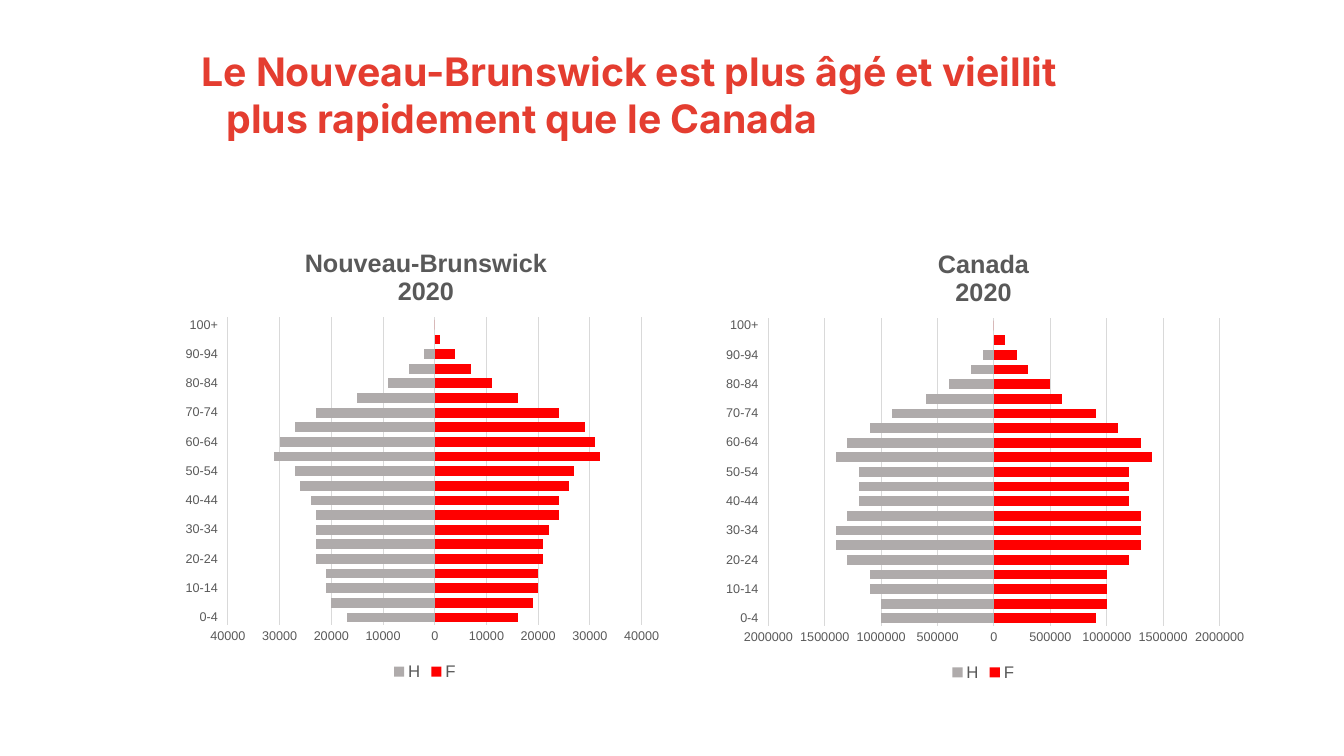
from dataclasses import dataclass
from lxml.etree import SubElement as Sub
from pptx import Presentation
from pptx.chart.data import CategoryChartData as Data
from pptx.dml.color import RGBColor as Rgb
from pptx.enum.chart import XL_CHART_TYPE as Kind
from pptx.enum.chart import XL_LEGEND_POSITION as Spot
from pptx.enum.chart import XL_TICK_LABEL_POSITION as Label
from pptx.enum.chart import XL_TICK_MARK as Tick
from pptx.enum.text import MSO_ANCHOR as Anchor
from pptx.enum.text import MSO_AUTO_SIZE as Fit
from pptx.enum.text import PP_ALIGN as Align
from pptx.oxml.ns import qn
from pptx.util import Cm, Pt


@dataclass(frozen=True)
class Theme:
    head: str = "E43D30"
    text: str = "595959"
    grid: str = "D9D9D9"
    men: str = "AFABAB"
    women: str = "FF0000"
    title: str = "Inter"
    body: str = "Arial"
    big: int = 28
    name: int = 18
    key: int = 12
    tick: int = 9


LOOK = Theme()
AGES = [f"{age}-{age + 4}" for age in range(0, 100, 5)] + ["100+"]
NB_MEN = [17, 20, 21, 21, 23, 23, 23, 23, 24, 26, 27, 31, 30, 27, 23, 15, 9, 5, 2, 0, 0]
NB_WOMEN = [16, 19, 20, 20, 21, 21, 22, 24, 24, 26, 27, 32, 31, 29, 24, 16, 11, 7, 4, 1, 0]
CA_MEN = [10, 10, 11, 11, 13, 14, 14, 13, 12, 12, 12, 14, 13, 11, 9, 6, 4, 2, 1, 0, 0]
CA_WOMEN = [9, 10, 10, 10, 12, 13, 13, 13, 12, 12, 12, 14, 13, 11, 9, 6, 5, 3, 2, 1, 0]


def style(font, face, size, color, bold=False):
    font.name = face
    font.size = Pt(size)
    font.bold = bold
    font.color.rgb = Rgb.from_string(color)


def stroke(line, color):
    line.color.rgb = Rgb.from_string(color)
    line.width = Pt(0.75)


def add_run(para, text, face, size, color):
    run = para.add_run()
    run.text = text
    style(run.font, face, size, color, True)


def add_head(slide, text):
    head = slide.shapes.title
    head.left, head.top = Cm(4.19), Cm(1.07)
    head.width, head.height = Cm(24.66), Cm(3.3)
    frame = head.text_frame
    frame.word_wrap = True
    frame.auto_size = Fit.NONE
    frame.vertical_anchor = Anchor.TOP
    para = frame.paragraphs[0]
    para.alignment = Align.LEFT
    props = para._p.get_or_add_pPr()
    props.set("marL", str(Cm(1.27)))
    props.set("indent", str(Cm(-0.64)))
    add_run(para, text, LOOK.title, LOOK.big, LOOK.head)


def place(node, index, sizes, inner=False):
    for old in node.findall(qn("c:layout")):
        node.remove(old)
    box = Sub(node, qn("c:layout"))
    node.insert(index, box)
    area = Sub(box, qn("c:manualLayout"))
    if inner:
        Sub(area, qn("c:layoutTarget")).set("val", "inner")
    for key in ("xMode", "yMode"):
        Sub(area, qn(f"c:{key}")).set("val", "edge")
    for key, size in zip("xywh", sizes):
        Sub(area, qn(f"c:{key}")).set("val", str(size))


def name_chart(chart, name, left):
    chart.has_title = True
    frame = chart.chart_title.text_frame
    add_run(frame.paragraphs[0], name, LOOK.body, LOOK.name, LOOK.text)
    add_run(frame.add_paragraph(), "2020", LOOK.body, LOOK.name, LOOK.text)
    place(chart.chart_title.element, 1, (left, 0.04))


def set_axes(chart, limit, step):
    ages, count = chart.category_axis, chart.value_axis
    for axis in (ages, count):
        axis.major_tick_mark = axis.minor_tick_mark = Tick.NONE
        style(axis.tick_labels.font, LOOK.body, LOOK.tick, LOOK.text)
    ages.tick_label_position = Label.LOW
    stroke(ages.format.line, LOOK.grid)
    count.minimum_scale, count.maximum_scale = -limit, limit
    count.major_unit = step
    count.tick_labels.number_format = "0;0"
    count.tick_labels.number_format_is_linked = False
    count.format.line.fill.background()
    stroke(count.major_gridlines.format.line, LOOK.grid)


def add_ages(slide, name, box, men, women, unit, limit, step, left):
    data = Data(number_format="0;0")
    data.categories = AGES
    data.add_series("H", [-unit * num for num in men])
    data.add_series("F", [unit * num for num in women])
    area = [Cm(size) for size in box]
    chart = slide.shapes.add_chart(Kind.BAR_STACKED, *area, data).chart
    style(chart.font, LOOK.body, 10, LOOK.text)
    name_chart(chart, name, left)
    place(chart.element.chart.plotArea, 0, (0.1, 0.2, 0.84, 0.67), True)
    set_axes(chart, limit, step)
    plot = chart.plots[0]
    plot.gap_width, plot.overlap = 50, 100
    plot.vary_by_categories = False
    for group, color in zip(plot.series, (LOOK.men, LOOK.women)):
        group.format.fill.solid()
        group.format.fill.fore_color.rgb = Rgb.from_string(color)
        group.invert_if_negative = False
    chart.has_legend = True
    chart.legend.position = Spot.BOTTOM
    chart.legend.include_in_layout = False
    style(chart.legend.font, LOOK.body, LOOK.key, LOOK.text)


def main():
    deck = Presentation()
    deck.slide_width, deck.slide_height = Cm(33.87), Cm(19.05)
    slide = deck.slides.add_slide(deck.slide_layouts[5])
    add_head(slide, "Le Nouveau-Brunswick est plus âgé et vieillit plus rapidement que le Canada")
    add_ages(slide, "Nouveau-Brunswick", (4.5, 5.69, 12.42, 11.56),
             NB_MEN, NB_WOMEN, 1000, 40000, 10000, 0.25)
    add_ages(slide, "Canada", (18.01, 5.71, 13.54, 11.56),
             CA_MEN, CA_WOMEN, 100000, 2000000, 500000, 0.41)
    deck.save("out.pptx")


if __name__ == "__main__":
    main()
